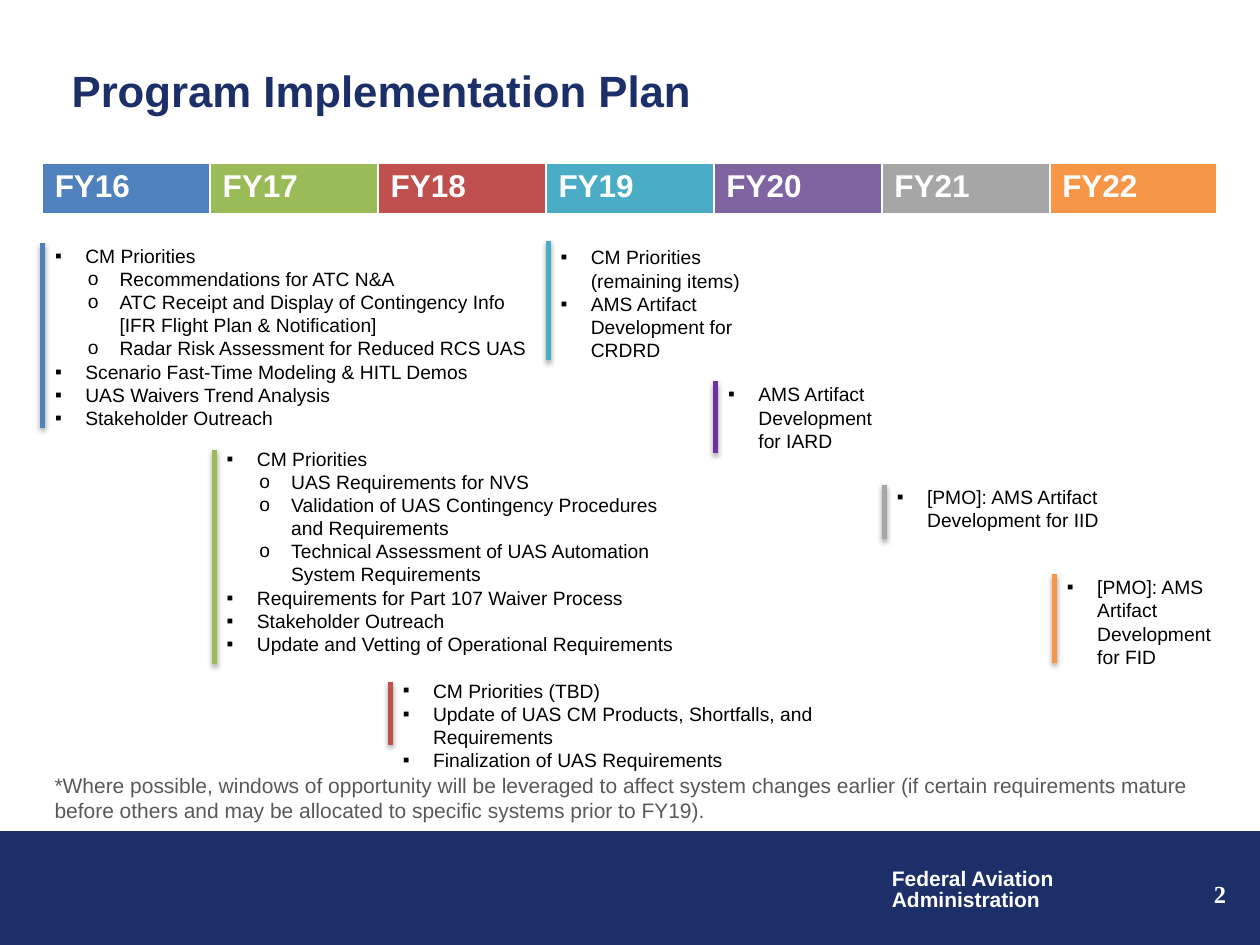
from dataclasses import dataclass

from lxml.etree import SubElement
from pptx import Presentation
from pptx.dml.color import RGBColor
from pptx.enum.shapes import MSO_CONNECTOR, MSO_SHAPE
from pptx.enum.text import MSO_ANCHOR as Anchor, MSO_AUTO_SIZE as AutoSize, PP_ALIGN as Align
from pptx.oxml.ns import qn
from pptx.util import Cm, Pt


@dataclass(frozen=True)
class Theme:
    """Colours, fonts and type sizes of the slide."""
    navy: str = "1D2F68"
    white: str = "FFFFFF"
    black: str = "000000"
    note: str = "595959"
    blue: str = "4F81BD"
    green: str = "9BBB59"
    red: str = "C0504D"
    teal: str = "4BACC6"
    purple: str = "8064A2"
    violet: str = "7030A0"
    grey: str = "A6A6A6"
    orange: str = "F79646"
    font: str = "Arial"
    number_font: str = "Times New Roman"
    title_size: float = 25
    year_size: float = 18
    number_size: float = 14
    note_size: float = 12
    list_size: float = 11


@dataclass(frozen=True)
class Box:
    """A rectangle in centimetres."""
    left: float
    top: float
    width: float
    height: float

    def inner(self, left, top, width, height):
        """Return a box placed relative to this one."""
        return Box(self.left + left, self.top + top, width, height)

    def lengths(self):
        """Return left, top, width and height as lengths."""
        return Cm(self.left), Cm(self.top), Cm(self.width), Cm(self.height)


@dataclass(frozen=True)
class Milestone:
    """A list of activities with a coloured bar on its left edge."""
    box: Box
    bar_top: float
    bar_height: float
    colour: str
    items: tuple


THEME = Theme()
BULLETS = (("▪", 0.61, 0.61), ("o", 1.3, 0.64))
YEARS = (
    ("FY16", THEME.blue), ("FY17", THEME.green), ("FY18", THEME.red),
    ("FY19", THEME.teal), ("FY20", THEME.purple), ("FY21", THEME.grey),
    ("FY22", THEME.orange),
)
MILESTONES = (
    Milestone(Box(0.86, 4.8, 10.19, 4.01), 0.1, 3.73, THEME.blue, (
        (0, "CM Priorities"),
        (1, "Recommendations for ATC N&A"),
        (1, "ATC Receipt and Display of Contingency Info [IFR Flight Plan & Notification]"),
        (1, "Radar Risk Assessment for Reduced RCS UAS"),
        (0, "Scenario Fast-Time Modeling & HITL Demos"),
        (0, "UAS Waivers Trend Analysis"),
        (0, "Stakeholder Outreach"))),
    Milestone(Box(4.32, 8.89, 9.65, 4.5), 0.18, 4.32, THEME.green, (
        (0, "CM Priorities"),
        (1, "UAS Requirements for NVS"),
        (1, "Validation of UAS Contingency Procedures and Requirements"),
        (1, "Technical Assessment of UAS Automation System Requirements"),
        (0, "Requirements for Part 107 Waiver Process"),
        (0, "Stakeholder Outreach"),
        (0, "Update and Vetting of Operational Requirements"))),
    Milestone(Box(7.87, 13.56, 11.3, 1.68), 0.18, 1.27, THEME.red, (
        (0, "CM Priorities (TBD)"),
        (0, "Update of UAS CM Products, Shortfalls, and Requirements"),
        (0, "Finalization of UAS Requirements"))),
    Milestone(Box(11.05, 4.83, 4.93, 2.62), 0.02, 2.41, THEME.teal, (
        (0, "CM Priorities (remaining items)"),
        (0, "AMS Artifact Development for CRDRD"))),
    Milestone(Box(14.43, 7.59, 3.84, 1.68), 0.1, 1.45, THEME.violet, (
        (0, "AMS Artifact Development for IARD"),)),
    Milestone(Box(17.83, 9.65, 4.72, 1.19), 0.13, 1.09, THEME.grey, (
        (0, "[PMO]: AMS Artifact Development for IID"),)),
    Milestone(Box(21.26, 11.48, 3.71, 2.13), 0.1, 1.78, THEME.orange, (
        (0, "[PMO]: AMS Artifact Development for FID"),)),
)


def add_bullet(paragraph, level):
    """Give the paragraph the bullet and hanging indent of its level."""
    character, margin, hanging = BULLETS[level]
    paragraph.level = level
    properties = paragraph._p.get_or_add_pPr()
    properties.set("marL", str(Cm(margin)))
    properties.set("indent", str(-Cm(hanging)))
    SubElement(properties, qn("a:buFont")).set("typeface", THEME.font)
    SubElement(properties, qn("a:buChar")).set("char", character)


def write_text(frame, text, *, size, colour, font=THEME.font, bold=False,
               align=Align.LEFT, spacing=None, level=None):
    """Write one formatted paragraph into the frame and return it."""
    first = frame.paragraphs[0]
    paragraph = frame.add_paragraph() if first.runs else first
    paragraph.alignment = align
    if spacing:
        paragraph.line_spacing = spacing
    if level is not None:
        add_bullet(paragraph, level)
    run = paragraph.add_run()
    run.text = text
    run.font.size = Pt(size)
    run.font.name = font
    run.font.bold = bold
    run.font.color.rgb = RGBColor.from_string(colour)
    return paragraph


def add_frame(slide, box, wrap=True, grow=True, anchor=Anchor.TOP):
    """Add a text box and return its text frame."""
    frame = slide.shapes.add_textbox(*box.lengths()).text_frame
    frame.word_wrap = wrap
    frame.auto_size = AutoSize.SHAPE_TO_FIT_TEXT if grow else AutoSize.NONE
    frame.vertical_anchor = anchor
    return frame


def add_footer(slide, box):
    """Draw the footer band with the agency name and the slide number."""
    band = slide.shapes.add_shape(MSO_SHAPE.RECTANGLE, *box.lengths())
    band.shadow.inherit = False
    band.fill.solid()
    band.fill.fore_color.rgb = RGBColor.from_string(THEME.navy)
    band.line.color.rgb = RGBColor.from_string(THEME.navy)
    band.line.width = Pt(0.75)
    agency = add_frame(slide, box.inner(17.73, 0.64, 3.81, 1.12), wrap=False)
    for line in ("Federal Aviation", "Administration"):
        write_text(agency, line, size=THEME.note_size, colour=THEME.white,
                   bold=True, spacing=0.85)
    number = add_frame(slide, box.inner(19.69, 0.41, 5.28, 1.27), grow=False,
                       anchor=Anchor.BOTTOM)
    write_text(number, "2", size=THEME.number_size, colour=THEME.white,
               font=THEME.number_font, bold=True, align=Align.RIGHT)


def add_title(slide, box):
    """Place and fill the title placeholder."""
    title = slide.shapes.title
    title.left, title.top, title.width, title.height = box.lengths()
    title.text_frame.vertical_anchor = Anchor.MIDDLE
    title.text_frame.auto_size = AutoSize.NONE
    write_text(title.text_frame, "Program Implementation Plan",
               size=THEME.title_size, colour=THEME.navy, bold=True)


def style_cell(cell, colour):
    """Give the cell white borders and a solid fill."""
    properties = cell._tc.get_or_add_tcPr()
    for side in ("lnL", "lnR", "lnT", "lnB"):
        border = SubElement(properties, qn(f"a:{side}"), w=str(Pt(1.5)))
        fill = SubElement(border, qn("a:solidFill"))
        SubElement(fill, qn("a:srgbClr"), val=THEME.white)
    cell.fill.solid()
    cell.fill.fore_color.rgb = RGBColor.from_string(colour)


def add_years(slide, box):
    """Draw the row of fiscal years as a table of equal columns."""
    table = slide.shapes.add_table(1, len(YEARS), *box.lengths()).table
    table.rows[0].height = Cm(box.height)
    for column, cell, (year, colour) in zip(table.columns, table.rows[0].cells, YEARS):
        column.width = Cm(box.width / len(YEARS))
        style_cell(cell, colour)
        write_text(cell.text_frame, year, size=THEME.year_size,
                   colour=THEME.white, bold=True)


def add_bar(slide, box, colour):
    """Draw a vertical line with a soft shadow down the left edge of the box."""
    left, top, bottom = Cm(box.left), Cm(box.top), Cm(box.top + box.height)
    bar = slide.shapes.add_connector(MSO_CONNECTOR.STRAIGHT, left, top, left, bottom)
    bar.line.color.rgb = RGBColor.from_string(colour)
    bar.line.width = Pt(3)
    effects = SubElement(bar._element.spPr, qn("a:effectLst"))
    shadow = SubElement(effects, qn("a:outerShdw"), blurRad="40000", dist="20000",
                        dir="5400000", rotWithShape="0")
    shade = SubElement(shadow, qn("a:srgbClr"), val=THEME.black)
    SubElement(shade, qn("a:alpha"), val="38000")


def add_milestone(slide, milestone):
    """Draw a milestone's bulleted list and its bar."""
    box = milestone.box
    frame = add_frame(slide, box)
    for level, text in milestone.items:
        write_text(frame, text, size=THEME.list_size, colour=THEME.black, level=level)
    add_bar(slide, box.inner(0, milestone.bar_top, 0, milestone.bar_height),
            milestone.colour)


def add_note(slide, box):
    """Write the footnote under the plan."""
    write_text(add_frame(slide, box),
               "*Where possible, windows of opportunity will be leveraged to affect "
               "system changes earlier (if certain requirements mature before others "
               "and may be allocated to specific systems prior to FY19).",
               size=THEME.note_size, colour=THEME.note)


def main():
    """Build the slide and save it."""
    presentation = Presentation()
    presentation.slide_width, presentation.slide_height = Cm(25.4), Cm(19.05)
    slide = presentation.slides.add_slide(presentation.slide_layouts[5])
    add_footer(slide, Box(0, 16.76, 25.4, 2.27))
    add_title(slide, Box(1.19, 0.97, 23.55, 1.7))
    add_years(slide, Box(0.85, 3.28, 23.7, 1.04))
    for milestone in MILESTONES:
        add_milestone(slide, milestone)
    add_note(slide, Box(0.85, 15.44, 23.7, 1.27))
    presentation.save("out.pptx")


if __name__ == "__main__":
    main()
